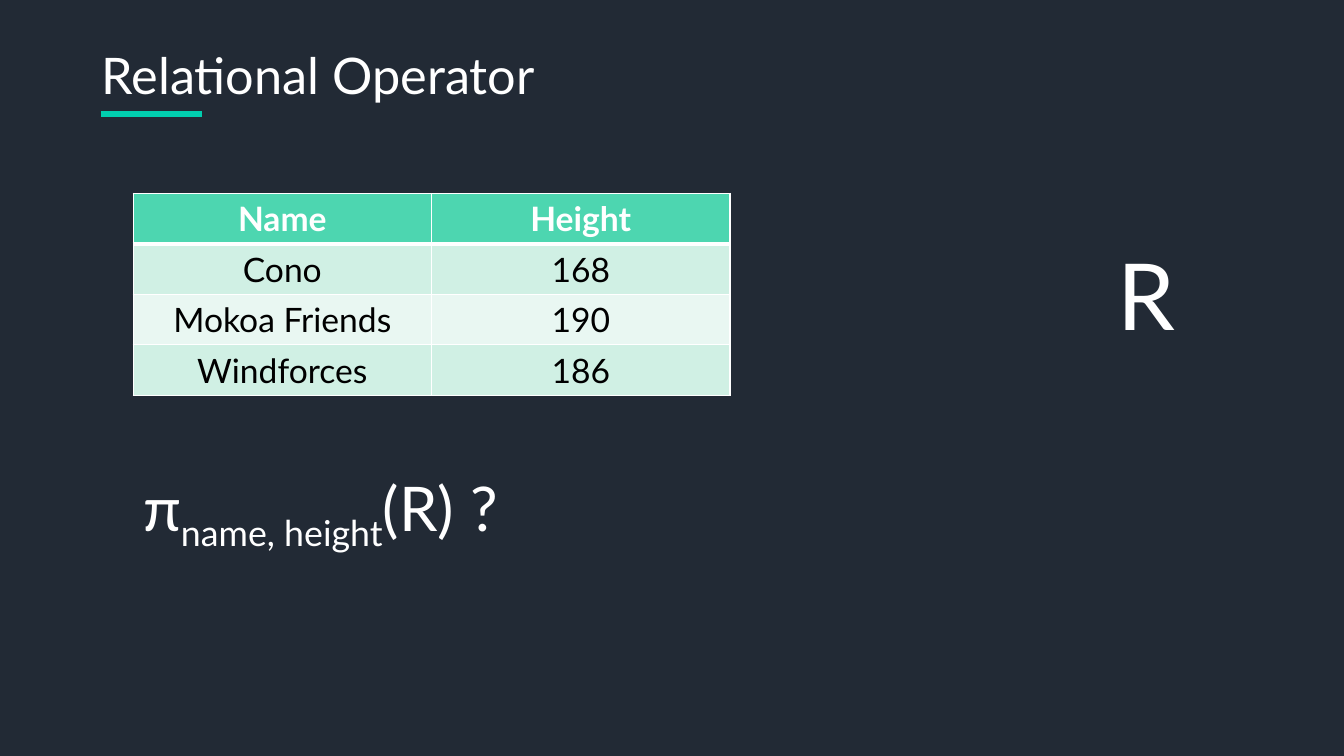
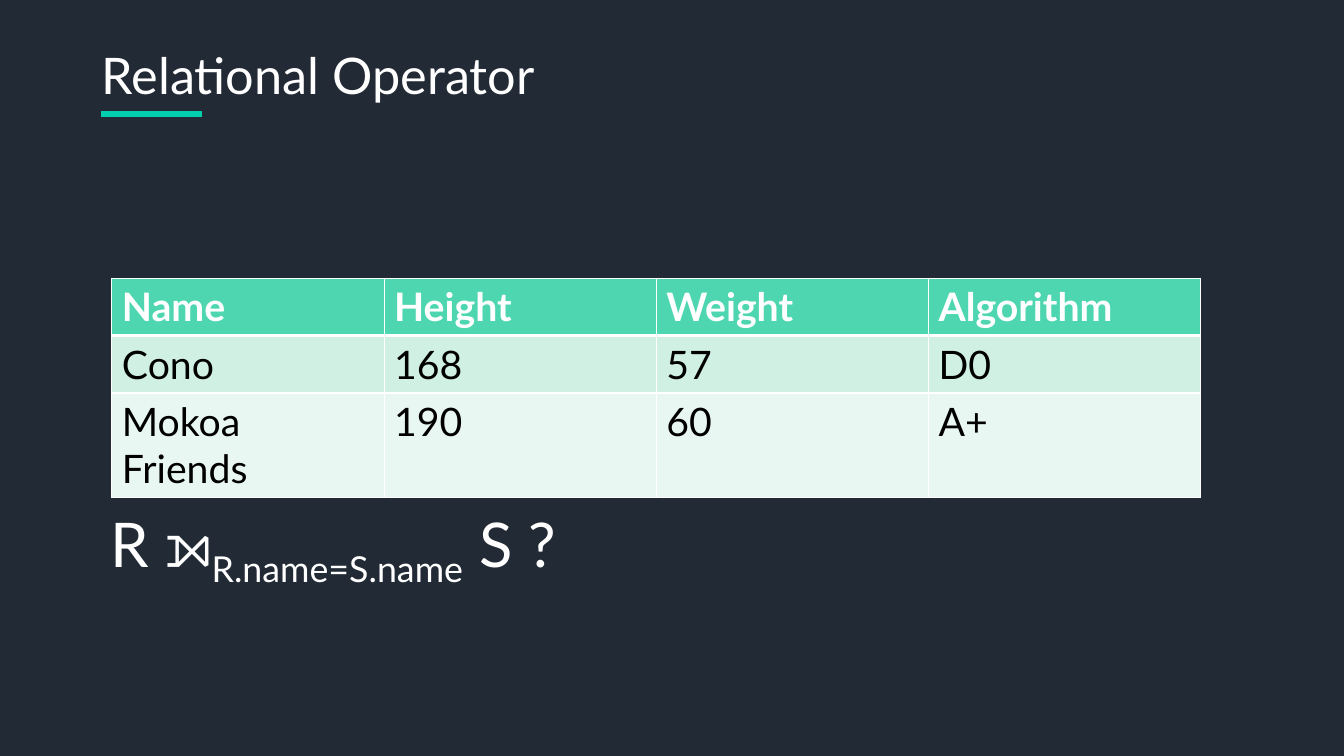
from dataclasses import dataclass

import pptx
import pptx.dml.color
import pptx.enum.shapes
import pptx.enum.text
import pptx.oxml
import pptx.oxml.ns
import pptx.presentation
import pptx.slide
import pptx.table
import pptx.util

Inches = pptx.util.Inches
Pt = pptx.util.Pt
RGBColor = pptx.dml.color.RGBColor
Align = pptx.enum.text.PP_ALIGN


@dataclass(frozen=True)
class Theme:
    font: str = "Lato"
    background: str = "222A35"
    light: str = "FFFFFF"
    dark: str = "000000"
    accent: str = "01CEAF"
    header: str = "4DD6B0"
    bands: tuple[str, str] = ("D0F0E4", "E9F7F2")
    title_size: int = 36
    formula_size: int = 44
    relation_size: int = 66
    accent_width: float = 4.5
    border: int = 1
    header_border: int = 3


THEME = Theme()


@dataclass(frozen=True)
class Term:
    text: str
    subscript: bool = False


@dataclass(frozen=True)
class Label:
    left: float
    top: float
    width: float
    height: float
    size: int
    terms: tuple[Term, ...]


@dataclass(frozen=True)
class Relation:
    left: float
    top: float
    column_width: float
    row_height: float
    size: int
    align: Align
    rows: tuple[tuple[str, ...], ...]


@dataclass(frozen=True)
class Page:
    relation: Relation
    labels: tuple[Label, ...]


TITLE = Label(0.91, 0.39, 4.54, 0.71, THEME.title_size, (Term("Relational Operator"),))

PAGES = (
    Page(
        Relation(1.32, 1.92, 2.96, 0.5, 24, Align.CENTER, (
            ("Name", "Height"),
            ("Cono", "168"),
            ("Mokoa Friends", "190"),
            ("Windforces", "186"),
        )),
        (
            Label(1.32, 4.61, 4.15, 0.84, THEME.formula_size,
                  (Term("π"), Term("name, height", True), Term("(R) ?"))),
            Label(10.99, 2.31, 0.76, 1.21, THEME.relation_size, (Term("R"),)),
        ),
    ),
    Page(
        Relation(1.11, 2.76, 2.7, 0.57, 28, Align.LEFT, (
            ("Name", "Height", "Weight", "Algorithm"),
            ("Cono", "168", "57", "D0"),
            ("Mokoa Friends", "190", "60", "A+"),
        )),
        (
            Label(1, 4.97, 5.26, 0.84, THEME.formula_size,
                  (Term("R ⟕"), Term("R.name=S.name", True), Term(" S ?"))),
        ),
    ),
)


def add_run(paragraph, term: Term, size: int, color: str, bold: bool = False) -> None:
    run = paragraph.add_run()
    run.text = term.text
    run.font.name = THEME.font
    run.font.size = Pt(size)
    run.font.bold = bold
    run.font.color.rgb = RGBColor.from_string(color)
    if term.subscript:
        run._r.get_or_add_rPr().set("baseline", "-25000")


def add_label(slide: pptx.slide.Slide, label: Label) -> None:
    box = slide.shapes.add_textbox(
        Inches(label.left), Inches(label.top), Inches(label.width), Inches(label.height))
    frame = box.text_frame
    frame.word_wrap = False
    frame.auto_size = pptx.enum.text.MSO_AUTO_SIZE.SHAPE_TO_FIT_TEXT
    for term in label.terms:
        add_run(frame.paragraphs[0], term, label.size, THEME.light)


def add_heading(slide: pptx.slide.Slide) -> None:
    add_label(slide, TITLE)
    underline = slide.shapes.add_connector(
        pptx.enum.shapes.MSO_CONNECTOR.STRAIGHT,
        Inches(1), Inches(1.13), Inches(2), Inches(1.13))
    underline.line.color.rgb = RGBColor.from_string(THEME.accent)
    underline.line.width = Pt(THEME.accent_width)
    properties = underline._element.spPr
    properties.append(pptx.oxml.parse_xml(
        f"<a:effectLst {pptx.oxml.ns.nsdecls('a')}/>"))


def set_borders(cell: pptx.table._Cell, top: int, bottom: int) -> None:
    """Draw the cell's four edges; call before filling, as edges precede the fill."""
    properties = cell._tc.get_or_add_tcPr()
    edges = {"lnL": THEME.border, "lnR": THEME.border, "lnT": top, "lnB": bottom}
    for edge, width in edges.items():
        properties.append(pptx.oxml.parse_xml(
            f'<a:{edge} {pptx.oxml.ns.nsdecls("a")} w="{Pt(width)}">'
            f'<a:solidFill><a:srgbClr val="{THEME.light}"/></a:solidFill></a:{edge}>'))


def add_relation(slide: pptx.slide.Slide, relation: Relation) -> None:
    row_count, column_count = len(relation.rows), len(relation.rows[0])
    table = slide.shapes.add_table(
        row_count, column_count, Inches(relation.left), Inches(relation.top),
        Inches(relation.column_width * column_count),
        Inches(relation.row_height * row_count)).table
    for row_index, values in enumerate(relation.rows):
        is_header = row_index == 0
        fill = THEME.header if is_header else THEME.bands[(row_index - 1) % 2]
        color = THEME.light if is_header else THEME.dark
        top = THEME.header_border if row_index == 1 else THEME.border
        bottom = THEME.header_border if is_header else THEME.border
        for column_index, value in enumerate(values):
            cell = table.cell(row_index, column_index)
            set_borders(cell, top, bottom)
            cell.fill.solid()
            cell.fill.fore_color.rgb = RGBColor.from_string(fill)
            paragraph = cell.text_frame.paragraphs[0]
            paragraph.alignment = relation.align
            add_run(paragraph, Term(value), relation.size, color, is_header)


def add_page(deck: pptx.presentation.Presentation, page: Page) -> None:
    slide = deck.slides.add_slide(deck.slide_layouts[6])
    slide.background.fill.solid()
    slide.background.fill.fore_color.rgb = RGBColor.from_string(THEME.background)
    add_heading(slide)
    add_relation(slide, page.relation)
    for label in page.labels:
        add_label(slide, label)


def main() -> None:
    deck = pptx.Presentation()
    deck.slide_width = Inches(13.33)
    deck.slide_height = Inches(7.5)
    for page in PAGES:
        add_page(deck, page)
    deck.save("out.pptx")


if __name__ == "__main__":
    main()
